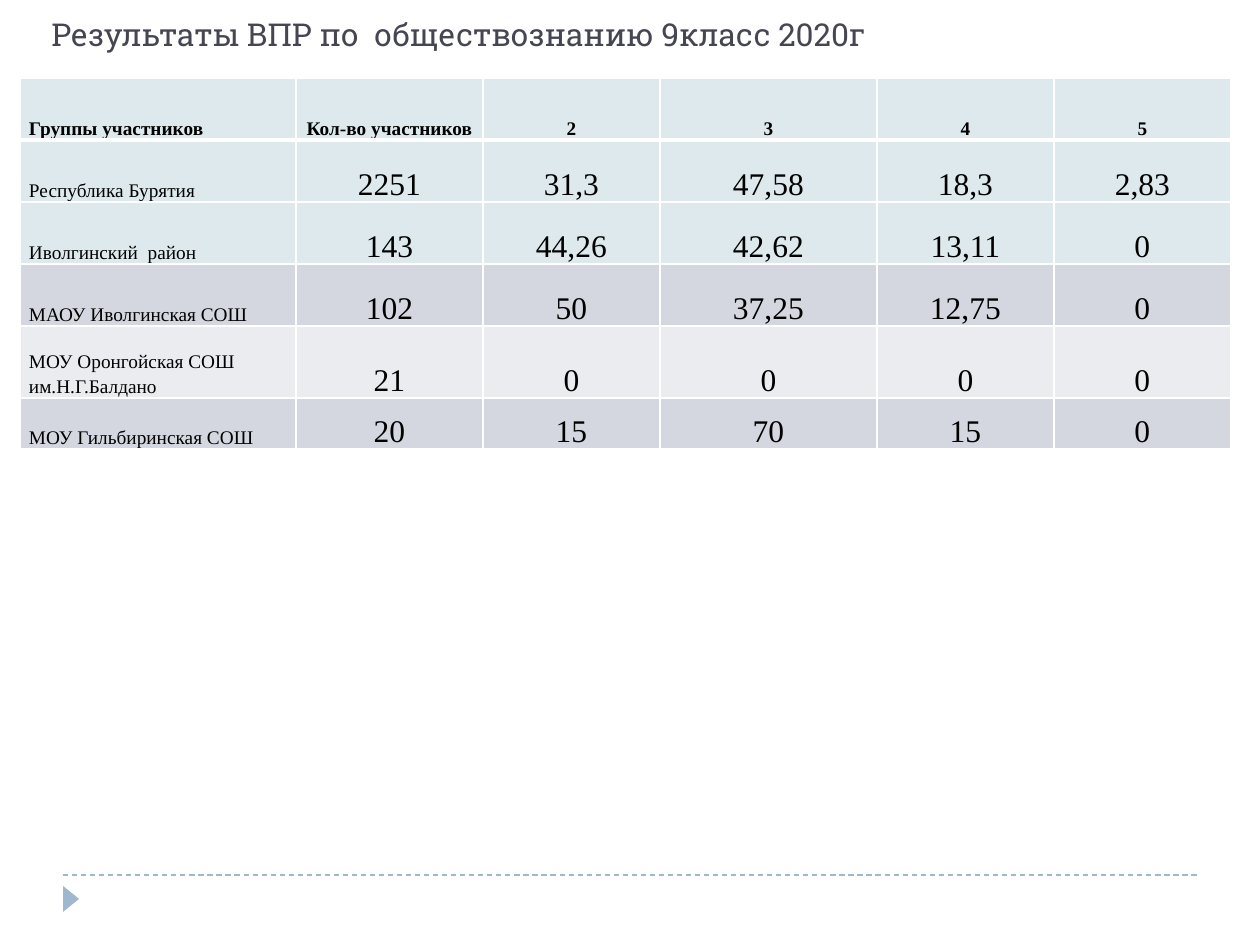
import pptx
import pptx.util
import pptx.dml.color
import pptx.enum.dml
import pptx.enum.shapes
import pptx.enum.text
import pptx.oxml

PX = 914400 // 126
COLORS = {
    "title": "464653",
    "text": "000000",
    "accent": "9FB8CD",
    "border": "FFFFFF",
    "summary": "DDE9EC",
    "band": "D5D7E0",
    "plain": "EBECF0",
}
ALIGN = pptx.enum.text.PP_ALIGN
BOTTOM = pptx.enum.text.MSO_ANCHOR.BOTTOM
TABLE_FONT = "Times New Roman"
COLUMNS = [276, 187, 177, 217, 177, 177]
ROWS = [
    (62, "summary", ["Группы участников", "Кол-во участников", "2", "3", "4", "5"]),
    (62, "summary", ["Республика Бурятия", "2251", "31,3", "47,58", "18,3", "2,83"]),
    (62, "summary", ["Иволгинский  район", "143", "44,26", "42,62", "13,11", "0"]),
    (62, "band", ["МАОУ Иволгинская СОШ", "102", "50", "37,25", "12,75", "0"]),
    (72, "plain", ["МОУ Оронгойская СОШ им.Н.Г.Балдано", "21", "0", "0", "0", "0"]),
    (51, "band", ["МОУ Гильбиринская СОШ", "20", "15", "70", "15", "0"]),
]


def px(*values):
    return [pptx.util.Emu(v * PX) for v in values]


def rgb(name):
    return pptx.dml.color.RGBColor.from_string(COLORS[name])


def set_attrs(obj, values):
    for name, value in values.items():
        setattr(obj, name, value)


def write(tf, text, color, font, paragraph):
    p = tf.paragraphs[0]
    set_attrs(p, paragraph)
    r = p.add_run()
    r.text = text
    set_attrs(r.font, font)
    r.font.color.rgb = rgb(color)


def add_title(s, box, text):
    tf = s.shapes.add_textbox(*px(*box)).text_frame
    set_attrs(tf, {"word_wrap": True, "vertical_anchor": BOTTOM})
    write(tf, text, "title", {"name": "Roboto Slab", "size": pptx.util.Pt(18)}, {})


def add_borders(cell, widths):
    tc_pr = cell._tc.get_or_add_tcPr()
    for side, width in widths.items():
        tc_pr.append(pptx.oxml.parse_xml(
            f'<a:ln{side} xmlns:a="http://schemas.openxmlformats.org/drawingml/2006/main"'
            f' w="{pptx.util.Pt(width)}"><a:solidFill><a:srgbClr val="{COLORS["border"]}"/>'
            f'</a:solidFill></a:ln{side}>'))


def fill_cell(cell, text, row, col, color):
    inset, = px(9)
    set_attrs(cell, {"margin_left": inset, "margin_right": inset, "margin_top": 0,
                     "margin_bottom": 0, "vertical_anchor": BOTTOM})
    header = row == 0
    size = 11 if header or col == 0 else 18
    write(cell.text_frame, text, "text",
          {"name": TABLE_FONT, "size": pptx.util.Pt(size), "bold": header},
          {"alignment": ALIGN.CENTER if col else ALIGN.LEFT, "line_spacing": 1.15})
    add_borders(cell, {"L": 1, "R": 1, "T": 3 if row == 1 else 1, "B": 3 if header else 1})
    cell.fill.solid()
    cell.fill.fore_color.rgb = rgb(color)


def add_results(s, left, top):
    heights = [height for height, _, _ in ROWS]
    size = px(left, top, sum(COLUMNS), sum(heights))
    table = s.shapes.add_table(len(ROWS), len(COLUMNS), *size).table
    table.horz_banding = False
    for column, width in zip(table.columns, px(*COLUMNS)):
        column.width = width
    for i, (height, color, texts) in enumerate(ROWS):
        table.rows[i].height, = px(height)
        for j, text in enumerate(texts):
            fill_cell(table.cell(i, j), text, i, j, color)


def add_dashed_line(s, x1, x2, y):
    line = s.shapes.add_connector(
        pptx.enum.shapes.MSO_CONNECTOR.STRAIGHT, *px(x1, y, x2, y))
    set_attrs(line.line, {"width": pptx.util.Pt(0.75),
                          "dash_style": pptx.enum.dml.MSO_LINE.DASH})
    line.line.color.rgb = rgb("accent")
    line._element.spPr.append(pptx.oxml.parse_xml(
        '<a:effectLst xmlns:a="http://schemas.openxmlformats.org/drawingml/2006/main"/>'))


def add_marker(s, box):
    sp = s.shapes.add_shape(pptx.enum.shapes.MSO_SHAPE.ISOSCELES_TRIANGLE, *px(*box))
    sp.rotation = 90
    sp.shadow.inherit = False
    sp.fill.solid()
    sp.fill.fore_color.rgb = rgb("accent")
    sp.line.fill.background()


def main():
    prs = pptx.Presentation()
    prs.slide_width, prs.slide_height = px(1260, 945)
    s = prs.slides.add_slide(prs.slide_layouts[6])
    add_dashed_line(s, 63, 1197, 875)
    add_marker(s, (58, 891, 26, 16))
    add_title(s, (39, 21, 1182, 38), "Результаты ВПР по  обществознанию 9класс 2020г")
    add_results(s, 20, 78)
    prs.save("out.pptx")


if __name__ == "__main__":
    main()
